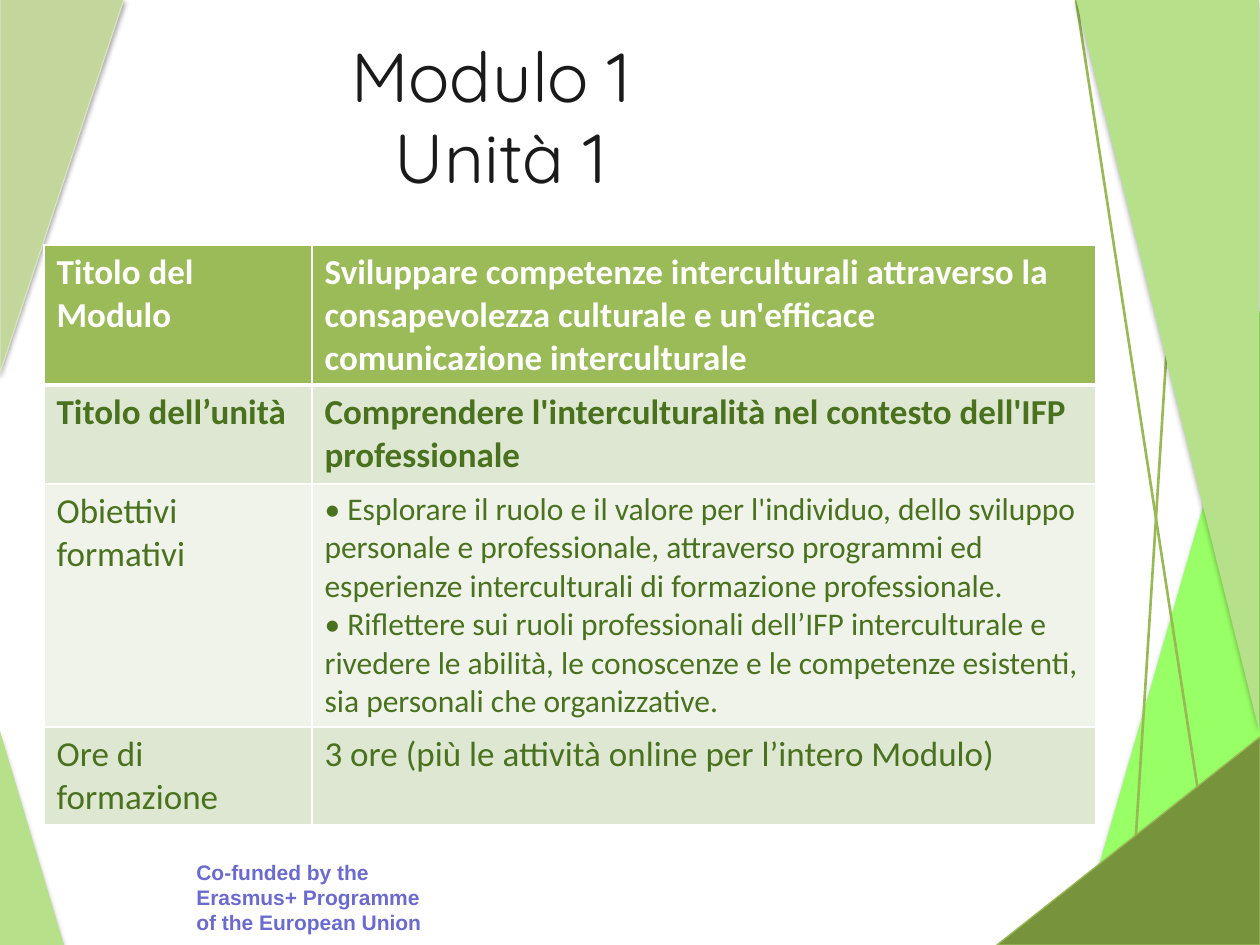
"""Build the module and unit overview slide with its table and triangle decoration."""
from lxml import etree
from pptx import Presentation
from pptx.dml.color import RGBColor
from pptx.enum.shapes import MSO_CONNECTOR, MSO_SHAPE
from pptx.enum.text import MSO_ANCHOR, PP_ALIGN
from pptx.oxml.ns import qn
from pptx.util import Emu, Pt

TRIANGLE = MSO_SHAPE.RIGHT_TRIANGLE
STRAIGHT = MSO_CONNECTOR.STRAIGHT
TOP = MSO_ANCHOR.TOP
CENTER = PP_ALIGN.CENTER
LEFT = PP_ALIGN.LEFT

WHITE = RGBColor(0xFF, 0xFF, 0xFF)
INK = RGBColor(0x1A, 0x1A, 0x1A)
LILAC = RGBColor(0x6B, 0x6B, 0xCF)
NEON = RGBColor(0x99, 0xFF, 0x66)
LIGHT_GREEN = RGBColor(0xB7, 0xE0, 0x8B)
SAGE = RGBColor(0xC3, 0xD6, 0x9B)
PALE_SAGE = RGBColor(0xD7, 0xE4, 0xBD)
LINE_GREEN = RGBColor(0x98, 0xB9, 0x55)
OLIVE = RGBColor(0x77, 0x93, 0x3C)
HEADER_GREEN = RGBColor(0x9B, 0xBB, 0x59)
BAND_DARK = RGBColor(0xDE, 0xE7, 0xD1)
BAND_LIGHT = RGBColor(0xEF, 0xF3, 0xEA)
TEXT_GREEN = RGBColor(0x49, 0x71, 0x1E)

COLUMNS = (268, 784)
ROWS = (
    (140, HEADER_GREEN, WHITE, True, 20, "Titolo del Modulo",
     "Sviluppare competenze interculturali attraverso la consapevolezza culturale "
     "e un'efficace comunicazione interculturale"),
    (99, BAND_DARK, TEXT_GREEN, True, 20, "Titolo dell’unità",
     "Comprendere l'interculturalità nel contesto dell'IFP professionale"),
    (243, BAND_LIGHT, TEXT_GREEN, False, 18, "Obiettivi formativi",
     "• Esplorare il ruolo e il valore per l'individuo, dello sviluppo personale e "
     "professionale, attraverso programmi ed esperienze interculturali di formazione "
     "professionale.\n"
     "• Riflettere sui ruoli professionali dell’IFP interculturale e rivedere le abilità, "
     "le conoscenze e le competenze esistenti, sia personali che organizzative."),
    (98, BAND_DARK, TEXT_GREEN, False, 20, "Ore di formazione",
     "3 ore (più le attività online per l’intero Modulo)"),
)


def px(n):
    return Emu(round(n * 914400 / 126))


def add_shadow(sp, alpha):
    effects = etree.SubElement(sp._element.spPr, qn("a:effectLst"))
    shadow = etree.SubElement(effects, qn("a:outerShdw"), blurRad=str(Pt(3.1)),
                              dist=str(Pt(1.8)), dir="5400000", rotWithShape="0")
    color = etree.SubElement(shadow, qn("a:srgbClr"), val="000000")
    etree.SubElement(color, qn("a:alpha"), val=str(alpha * 1000))


def add_triangle(slide, box, fill, flips=(), line=None, alpha=35):
    sp = slide.shapes.add_shape(TRIANGLE, *map(px, box))
    sp.fill.solid()
    sp.fill.fore_color.rgb = fill
    if line is None:
        sp.line.fill.background()
    else:
        sp.line.color.rgb = line
        sp.line.width = Pt(0.75)
    for flip in flips:
        sp._element.spPr.xfrm.set(flip, "1")
    add_shadow(sp, alpha)


def add_line(slide, *ends):
    line = slide.shapes.add_connector(STRAIGHT, *map(px, ends))
    line.line.color.rgb = LINE_GREEN
    line.line.width = Pt(1.5)
    etree.SubElement(line._element.spPr, qn("a:effectLst"))


def style_text(tf, font, size, color, bold=False, align=LEFT):
    for p in tf.paragraphs:
        p.alignment = align
        for r in p.runs:
            r.font.name = font
            r.font.size = Pt(size)
            r.font.bold = bold
            r.font.color.rgb = color


def add_text(slide, box, text, font, size, color, bold=False, align=LEFT):
    tf = slide.shapes.add_textbox(*map(px, box)).text_frame
    tf.word_wrap = True
    tf.vertical_anchor = TOP
    tf.text = text
    style_text(tf, font, size, color, bold, align)
    return tf


def add_borders(cell, top, bottom):
    tc_pr = cell._tc.get_or_add_tcPr()
    for side, width in (("L", 1), ("R", 1), ("T", top), ("B", bottom)):
        ln = etree.SubElement(tc_pr, qn(f"a:ln{side}"), w=str(Pt(width)))
        fill = etree.SubElement(ln, qn("a:solidFill"))
        etree.SubElement(fill, qn("a:srgbClr"), val=str(WHITE))


def add_module_table(slide):
    height = sum(row[0] for row in ROWS)
    table = slide.shapes.add_table(len(ROWS), len(COLUMNS), px(44), px(245),
                                   px(sum(COLUMNS)), px(height)).table
    for column, width in zip(table.columns, COLUMNS):
        column.width = px(width)
    for i, (row_height, fill, color, bold, size, *texts) in enumerate(ROWS):
        table.rows[i].height = px(row_height)
        for j, text in enumerate(texts):
            cell = table.cell(i, j)
            add_borders(cell, 3 if i == 1 else 1, 3 if i == 0 else 1)
            cell.fill.solid()
            cell.fill.fore_color.rgb = fill
            cell.text = text
            style_text(cell.text_frame, "Calibri", size if j else 20, color, bold)


def main():
    prs = Presentation()
    prs.slide_width, prs.slide_height = px(1260), px(945)
    slide = prs.slides.add_slide(prs.slide_layouts[6])

    add_triangle(slide, (1076, 304, 186, 641), NEON, ("flipH",), alpha=38)
    add_text(slide, (184, 853, 252, 89),
             "Co-funded by the Erasmus+ Programme of the European Union",
             "Arial", 12, LILAC, bold=True)
    add_triangle(slide, (0, 731, 64, 214), LIGHT_GREEN)
    add_triangle(slide, (0, -1, 124, 374), SAGE, ("flipV",), PALE_SAGE)
    add_line(slide, 1129, 945, 1172, 265)
    add_line(slide, 1216, 908, 1076, -1)
    add_triangle(slide, (1076, -1, 183, 731), LIGHT_GREEN, ("flipH", "flipV"))
    add_triangle(slide, (997, 737, 263, 208), OLIVE, ("flipH",), LINE_GREEN)

    title = add_text(slide, (93, 38, 815, 245), "Modulo 1 \vUnità 1",
                     "Quicksand", 39.6, INK, align=CENTER)
    title.margin_top = 0
    title.paragraphs[0].line_spacing = 0.97
    add_module_table(slide)
    prs.save("out.pptx")


if __name__ == "__main__":
    main()
